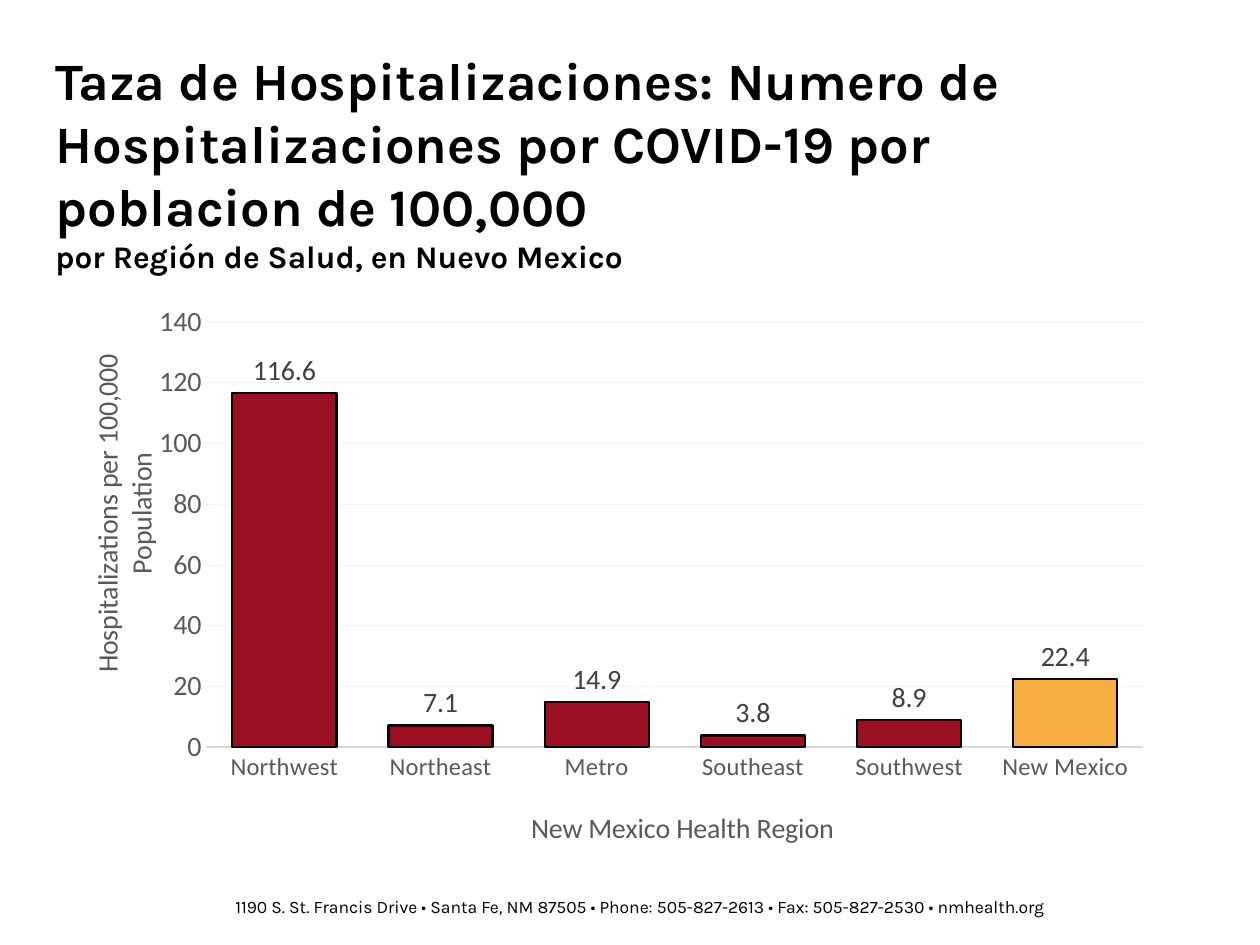
import pptx
import pptx.chart.data
import pptx.dml.color
import pptx.enum.chart
import pptx.enum.text
import pptx.oxml
import pptx.oxml.ns
import pptx.util

Pt = pptx.util.Pt
CHART = pptx.enum.chart
TEXT = pptx.enum.text

RATES = {"Northwest": 116.6, "Northeast": 7.1, "Metro": 14.9,
         "Southeast": 3.8, "Southwest": 8.9, "New Mexico": 22.4}
RED, GOLD, BLACK, GREY = "9B0F23", "F6AE42", "000000", "595959"


def tint(color, code):
    color.rgb = pptx.dml.color.RGBColor.from_string(code)


def put(item, **values):
    for name, value in values.items():
        setattr(item, name, value)


def style(font, size, code, face="Karla", bold=False):
    put(font, size=Pt(size), name=face, bold=bold)
    tint(font.color, code)


def paint(form, fill):
    form.fill.solid()
    tint(form.fill.fore_color, fill)
    stroke(form.line, BLACK, 1.25)


def stroke(line, code, width):
    tint(line.color, code)
    line.width = Pt(width)


def place(parent, index, **parts):
    """Give a plot area or an axis title a manual layout."""
    for old in parent.findall(pptx.oxml.ns.qn("c:layout")):
        parent.remove(old)
    tags = "".join(f'<c:{tag} val="{val}"/>' for tag, val in parts.items())
    parent.insert(index, pptx.oxml.parse_xml(
        f'<c:layout {pptx.oxml.ns.nsdecls("c")}>'
        f"<c:manualLayout>{tags}</c:manualLayout></c:layout>"))


def name_axis(axis, lines, left, top):
    title = axis.axis_title
    frame = title.text_frame
    frame.text = "\n".join(lines)
    for para in frame.paragraphs:
        for run in para.runs:
            style(run.font, 16, GREY, "Calibri")
    place(title._element, 1, xMode="edge", yMode="edge", x=left, y=top)
    return frame


def add_head(slide):
    title = slide.shapes.title
    put(title, left=Pt(24.5), top=Pt(23.8), width=Pt(641.5), height=Pt(138.2))
    frame = title.text_frame
    put(frame, word_wrap=True, auto_size=TEXT.MSO_AUTO_SIZE.NONE,
        vertical_anchor=TEXT.MSO_ANCHOR.TOP)
    para = frame.paragraphs[0]
    para.alignment = TEXT.PP_ALIGN.LEFT
    run = para.add_run()
    run.text = ("Taza de Hospitalizaciones: Numero de Hospitalizaciones "
                "por COVID-19 por poblacion de 100,000")
    style(run.font, 30, BLACK, bold=True)
    para.add_line_break()
    run = para.add_run()
    run.text = "por Región de Salud, en Nuevo Mexico"
    style(run.font, 18, BLACK, bold=True)


def add_rates(slide):
    data = pptx.chart.data.CategoryChartData(number_format="0.0")
    data.categories = list(RATES)
    data.add_series("Series 1", list(RATES.values()))
    chart = slide.shapes.add_chart(
        CHART.XL_CHART_TYPE.COLUMN_CLUSTERED,
        Pt(36), Pt(167.8), Pt(630), Pt(324), data).chart
    put(chart, has_legend=False, has_title=False)
    style(chart.font, 10, BLACK)

    # Columns, with the state total picked out
    plot = chart.plots[0]
    put(plot, gap_width=50, overlap=-27, vary_by_categories=False,
        has_data_labels=True)
    bars = plot.series[0]
    paint(bars.format, RED)
    paint(bars.points[len(RATES) - 1].format, GOLD)
    labels = plot.data_labels
    put(labels, show_value=True, number_format="0.0",
        number_format_is_linked=False,
        position=CHART.XL_LABEL_POSITION.OUTSIDE_END)
    style(labels.font, 16, "404040", "Calibri")

    # Axes
    cats, vals = chart.category_axis, chart.value_axis
    for axis, size in ((cats, 14), (vals, 16)):
        put(axis, major_tick_mark=CHART.XL_TICK_MARK.NONE,
            minor_tick_mark=CHART.XL_TICK_MARK.NONE)
        style(axis.tick_labels.font, size, GREY, "Calibri")
    stroke(cats.format.line, "D9D9D9", 0.75)
    put(vals, minimum_scale=0, maximum_scale=140, major_unit=20,
        has_major_gridlines=True)
    put(vals.tick_labels, number_format="#,##0", number_format_is_linked=False)
    vals.format.line.fill.background()
    stroke(vals.major_gridlines.format.line, "F3F2F2", 0.25)

    # Axis titles and plot area
    name_axis(cats, ["New Mexico Health Region"], 0.42, 0.9)
    side = name_axis(
        vals, ["Hospitalizations per 100,000", "Population"], 0.02, 0.1)
    body = side._txBody.bodyPr
    body.set("rot", "-5400000")
    body.set("vert", "horz")
    area = chart._chartSpace.chart.plotArea
    place(area, 0, layoutTarget="inner", xMode="edge", yMode="edge",
          x=0.13, y=0.05, w=0.85, h=0.75)


def add_foot(slide):
    box = slide.shapes.add_textbox(Pt(127.4), Pt(508.3), Pt(590.4), Pt(19.4))
    frame = box.text_frame
    frame.word_wrap = True
    run = frame.paragraphs[0].add_run()
    run.text = ("1190 S. St. Francis Drive • Santa Fe, NM 87505 • "
                "Phone: 505-827-2613 • Fax: 505-827-2530 • nmhealth.org")
    style(run.font, 10, BLACK)


def main():
    deck = pptx.Presentation()
    put(deck, slide_width=Pt(720), slide_height=Pt(540))
    slide = deck.slides.add_slide(deck.slide_layouts.get_by_name("Title Only"))
    add_foot(slide)
    add_rates(slide)
    add_head(slide)
    deck.save("out.pptx")


if __name__ == "__main__":
    main()
